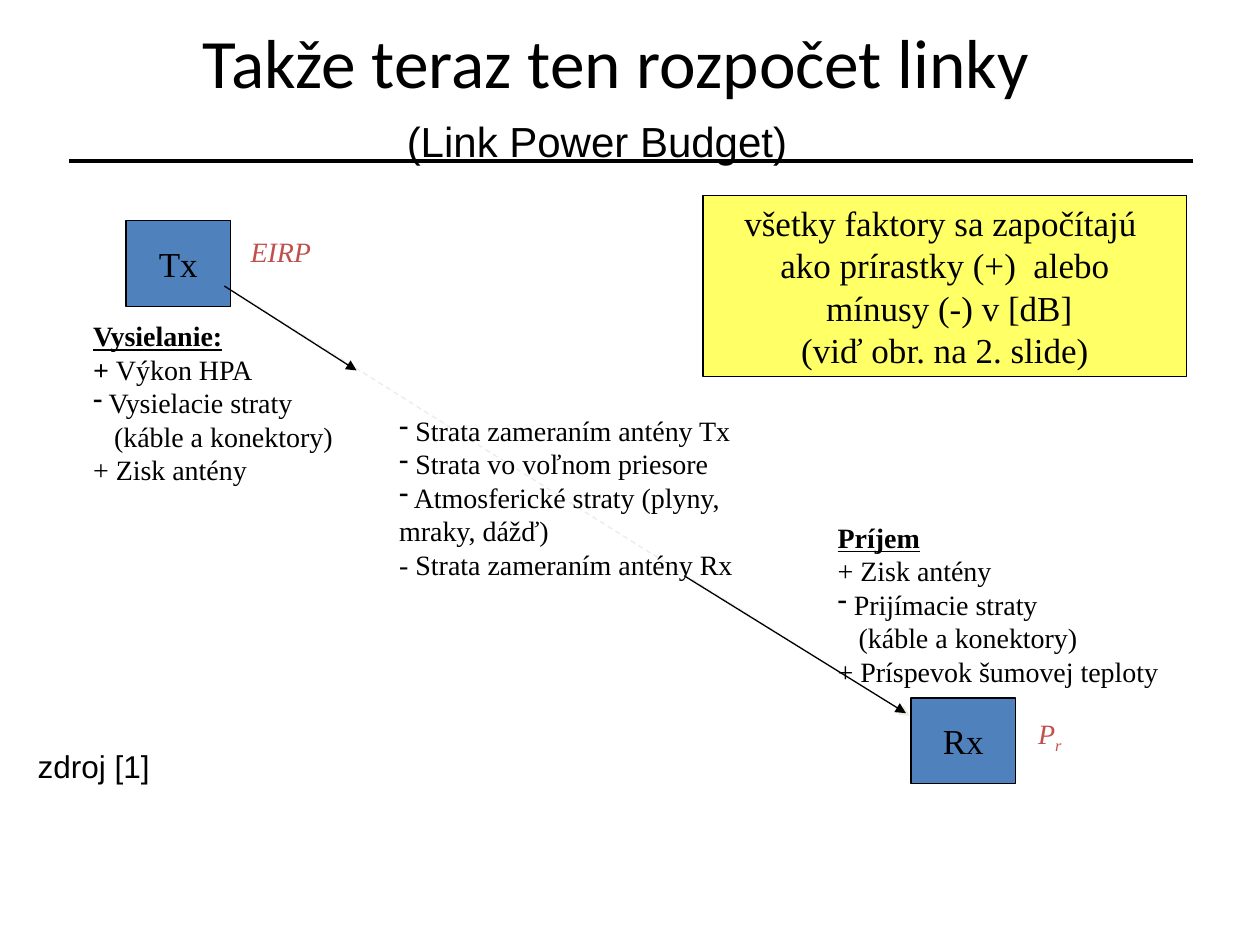
"""Build the link power budget slide."""
import pptx
import pptx.util
import pptx.dml.color
import pptx.enum.dml
import pptx.enum.shapes
import pptx.enum.text
import pptx.oxml
import lxml.etree

THEME = {
    "black": "000000", "blue": "4F81BD", "yellow": "FFFF66", "red": "C0504D",
    "pale": "EEECE1", "serif": "Times New Roman", "sans": "Arial",
    "title_font": "Calibri", "title": 39.6, "subtitle": 24, "label": 20,
    "source": 18, "body": 16, "rule": 2.25, "thin": 0.75,
}
RGB = pptx.dml.color.RGBColor.from_string
Pt = pptx.util.Pt
SHAPE = pptx.enum.shapes.MSO_SHAPE
MIDDLE = pptx.enum.text.MSO_ANCHOR.MIDDLE
CENTER = pptx.enum.text.PP_ALIGN.CENTER

prs = pptx.Presentation()
prs.slide_width = pptx.util.Inches(10)
prs.slide_height = pptx.util.Inches(7.5)
s = prs.slides.add_slide(prs.slide_layouts[6])
col, row = prs.slide_width / 10, prs.slide_height / 7.5


def grid(x, y, w, h):
    return int(x * col), int(y * row), int(w * col), int(h * row)


def write(sp, text, size, font="serif", color="black", align=None, wrap=True):
    tf = sp.text_frame
    tf.text = text
    tf.word_wrap = wrap
    for p in tf.paragraphs:
        p.alignment = align
        for r in p.runs:
            r.font.size = Pt(THEME[size])
            r.font.name = THEME[font]
            r.font.color.rgb = RGB(THEME[color])
    return tf


title = s.shapes.add_textbox(*grid(0.64, 0.16, 8.5, 0.65))
write(title, "Takže teraz ten rozpočet linky", "title", "title_font", align=CENTER).vertical_anchor = MIDDLE

lines = [
    (0.55, 1.28, 9.47, 1.28, "black", "rule", False, False),
    (1.85, 2.31, 7.22, 5.68, "pale", "thin", True, True),
    (1.78, 2.27, 2.83, 2.94, "black", "thin", False, True),
    (5.43, 4.57, 7.19, 5.66, "black", "thin", False, True),
]
boxes = [
    (SHAPE.FLOWCHART_PROCESS, (1, 1.75, 0.83, 0.68), "blue", "Tx"),
    (SHAPE.FLOWCHART_PROCESS, (7.23, 5.54, 0.83, 0.68), "blue", "Rx"),
    (SHAPE.RECTANGLE, (5.58, 1.55, 3.84, 1.44), "yellow",
     "všetky faktory sa započítajú \nako prírastky (+)  alebo\n mínusy (-) v [dB]\n(viď obr. na 2. slide)"),
]
for kind, place, fill, text in boxes:
    sp = s.shapes.add_shape(kind, *grid(*place))
    sp.shadow.inherit = False
    sp.fill.solid()
    sp.fill.fore_color.rgb = RGB(THEME[fill])
    sp.line.color.rgb = RGB(THEME["black"])
    sp.line.width = Pt(THEME["thin"])
    write(sp, text, "label", align=CENTER, wrap=False).vertical_anchor = MIDDLE

for x1, y1, x2, y2, color, width, dashed, arrow in lines:
    c = s.shapes.add_connector(pptx.enum.shapes.MSO_CONNECTOR.STRAIGHT, *grid(x1, y1, x2, y2))
    c.line.color.rgb = RGB(THEME[color])
    c.line.width = Pt(THEME[width])
    if dashed:
        c.line.dash_style = pptx.enum.dml.MSO_LINE.DASH
    if arrow:
        lxml.etree.SubElement(c.line._get_or_add_ln(), pptx.oxml.ns.qn("a:tailEnd"), type="triangle")
    lxml.etree.SubElement(c._element.spPr, pptx.oxml.ns.qn("a:effectLst"))

budgets = [
    ((0.64, 2.48, 2.69, 1.44), True, {2}, {3},
     "Vysielanie:\n+ Výkon HPA\n Vysielacie straty\n(káble a konektory)\n+ Zisk antény"),
    ((3.07, 3.23, 2.87, 1.44), False, {0, 1, 2}, set(),
     " Strata zameraním antény Tx\n Strata vo voľnom priesore\n"
     " Atmosferické straty (plyny, mraky, dážď)\n- Strata zameraním antény Rx"),
    ((6.55, 4.08, 3.12, 1.44), True, {2}, {3},
     "Príjem\n+ Zisk antény\n Prijímacie straty\n(káble a konektory)\n+ Príspevok šumovej teploty"),
]
for place, headed, bulleted, indented, text in budgets:
    tf = write(s.shapes.add_textbox(*grid(*place)), text, "body")
    for i, p in enumerate(tf.paragraphs):
        pPr = p._p.get_or_add_pPr()
        if i in bulleted:
            lxml.etree.SubElement(pPr, pptx.oxml.ns.qn("a:buChar"), char="-")
        if i in indented:
            pPr.set("marL", str(Pt(THEME["body"] * 0.75)))
    if headed:
        heading = tf.paragraphs[0].runs[0].font
        heading.bold = heading.underline = True
    if text.startswith("Vysielanie"):
        p = tf.paragraphs[1]
        plus = p.runs[0]
        power = p.add_run()
        plus.text, power.text = "+ ", "Výkon HPA"
        plus.font.bold = True
        power.font.size, power.font.name = plus.font.size, plus.font.name
        power.font.color.rgb = plus.font.color.rgb

for x, y, text, subscript in [(1.89, 1.81, "EIRP", ""), (8.14, 5.64, "P", "r")]:
    tf = write(s.shapes.add_textbox(*grid(x, y, 0.82, 0.37)), text, "body", color="red")
    p = tf.paragraphs[0]
    if subscript:
        r = p.add_run()
        r.text = subscript
        r.font.size, r.font.name = Pt(THEME["body"]), THEME["serif"]
        r.font.color.rgb = RGB(THEME["red"])
        r.font._element.set("baseline", "-25000")
    for r in p.runs:
        r.font.italic = True

source = s.shapes.add_textbox(*grid(0.2, 5.88, 1.26, 0.4))
write(source, "zdroj [1]", "source", "sans")
subtitle = s.shapes.add_textbox(*grid(3.13, 0.87, 3.68, 0.51))
write(subtitle, "(Link Power Budget)", "subtitle", "sans")

prs.save("out.pptx")
